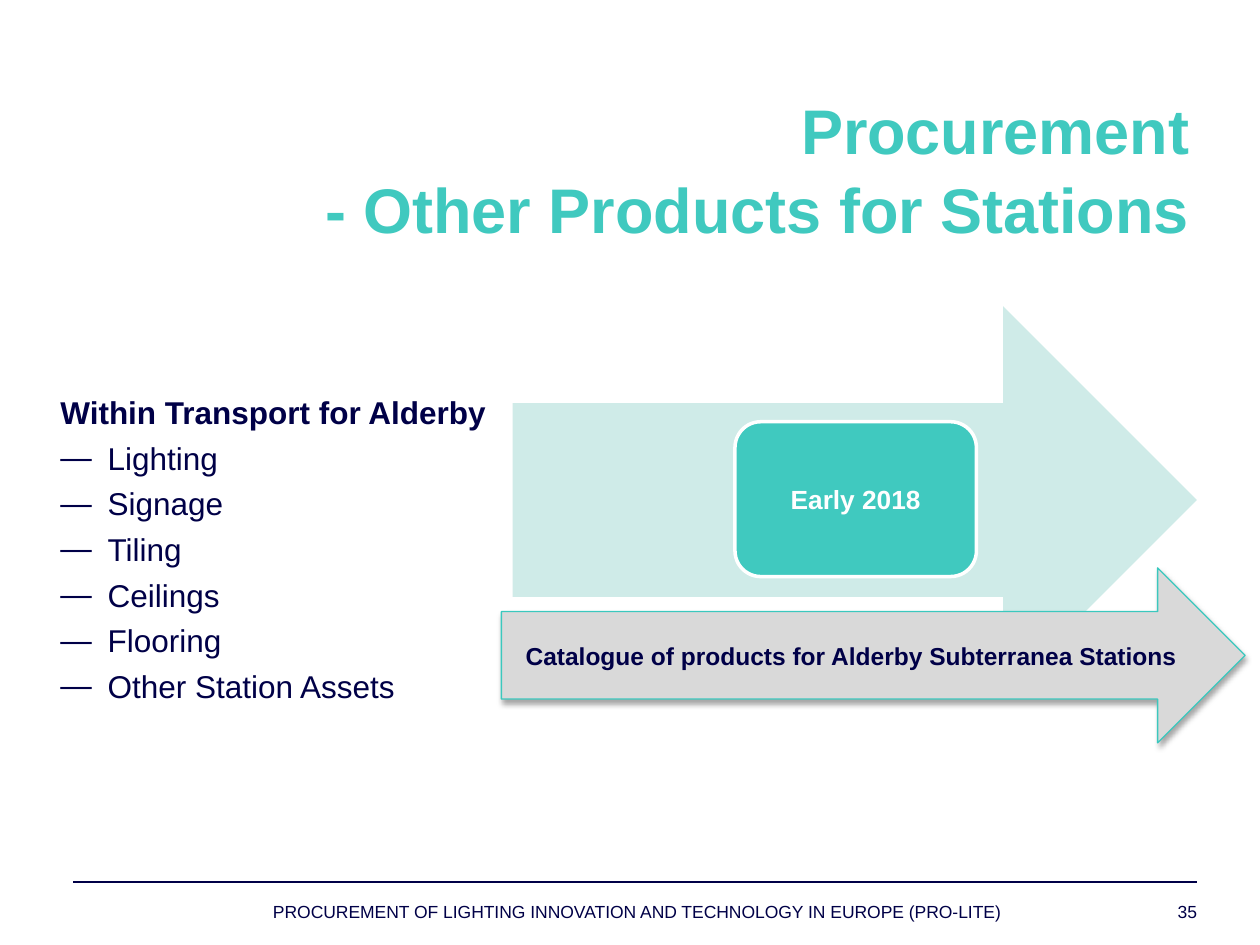
from dataclasses import dataclass

from lxml.etree import SubElement
from pptx import Presentation
from pptx.dml.color import RGBColor
from pptx.enum.shapes import MSO_CONNECTOR, MSO_SHAPE
from pptx.enum.text import MSO_ANCHOR, MSO_AUTO_SIZE, PP_ALIGN
from pptx.oxml.ns import qn
from pptx.util import Pt

TITLE = ["Procurement", "- Other Products for Stations"]
HEADING = "Within Transport for Alderby"
PRODUCTS = ["Lighting", "Signage", "Tiling", "Ceilings", "Flooring", "Other Station Assets"]
MILESTONE = "Early 2018"
CATALOGUE = "Catalogue of products for Alderby Subterranea Stations"
FOOTER = "PROCUREMENT OF LIGHTING INNOVATION AND TECHNOLOGY IN EUROPE (PRO-LITE)"
PAGE_NUMBER = "35"


@dataclass(frozen=True)
class Theme:
    font: str = "Arial"
    navy: str = "000047"
    teal: str = "40C9BF"
    outline: str = "3BC8BE"
    pale: str = "CFEBE8"
    grey: str = "D9D9D9"
    white: str = "FFFFFF"
    title: int = 36
    body: int = 18
    milestone: int = 15
    catalogue: int = 14
    footer: int = 10


THEME = Theme()
MARGIN_RIGHT = 684
BULLET_INDENT = 27


def write(paragraph, text, size, color=THEME.navy, bold=False, align=PP_ALIGN.LEFT, before=0):
    paragraph.alignment = align
    paragraph.space_before = Pt(before)
    run = paragraph.add_run()
    run.text = text
    run.font.name = THEME.font
    run.font.size = Pt(size)
    run.font.bold = bold
    run.font.color.rgb = RGBColor.from_string(color)


def next_paragraph(frame, index):
    return frame.add_paragraph() if index else frame.paragraphs[0]


def add_dash(paragraph):
    properties = paragraph._p.get_or_add_pPr()
    properties.set("marL", str(Pt(BULLET_INDENT)))
    properties.set("indent", str(-Pt(BULLET_INDENT)))
    SubElement(properties, qn("a:buFont"), typeface=THEME.font)
    SubElement(properties, qn("a:buChar"), char="—")


def add_text_box(slide, box, inset=None):
    frame = slide.shapes.add_textbox(*map(Pt, box)).text_frame
    frame.word_wrap = True
    if inset is not None:
        frame.margin_left = frame.margin_top = frame.margin_right = frame.margin_bottom = Pt(inset)
    return frame


def add_block(slide, kind, box, fill, line=None, width=0):
    shape = slide.shapes.add_shape(kind, *map(Pt, box))
    shape.shadow.inherit = False
    shape.fill.solid()
    shape.fill.fore_color.rgb = RGBColor.from_string(fill)
    if line:
        shape.line.color.rgb = RGBColor.from_string(line)
        shape.line.width = Pt(width)
    else:
        shape.line.fill.background()
    shape.text_frame.word_wrap = True
    shape.text_frame.vertical_anchor = MSO_ANCHOR.MIDDLE
    return shape


def add_shadow(shape):
    effects = shape._element.spPr.find(qn("a:effectLst"))
    shadow = SubElement(effects, qn("a:outerShdw"), blurRad=str(Pt(3.1)), dist=str(Pt(1.8)),
                        dir="5400000", rotWithShape="0")
    color = SubElement(shadow, qn("a:srgbClr"), val="000000")
    SubElement(color, qn("a:alpha"), val="35000")


def add_title(slide):
    title = slide.shapes.title
    title.left, title.top, title.width, title.height = map(Pt, (38, 48.5, 649, 94))
    frame = title.text_frame
    frame.word_wrap = True
    frame.auto_size = MSO_AUTO_SIZE.NONE
    frame.vertical_anchor = MSO_ANCHOR.TOP
    for index, text in enumerate(TITLE):
        write(next_paragraph(frame, index), text, THEME.title, THEME.teal, True,
              PP_ALIGN.RIGHT, 2 if index else 0)


def add_products(slide):
    frame = add_text_box(slide, (27.4, 221, 262, 192))
    for index, text in enumerate([HEADING, *PRODUCTS]):
        paragraph = next_paragraph(frame, index)
        if index:
            add_dash(paragraph)
        write(paragraph, text, THEME.body, bold=index == 0, before=4.5 if index else 0)


def add_timeline(slide):
    add_block(slide, MSO_SHAPE.RIGHT_ARROW, (293, 175, 391, 221.5), THEME.pale)
    milestone = add_block(slide, MSO_SHAPE.ROUNDED_RECTANGLE, (420, 241, 138, 88.5),
                          THEME.teal, THEME.white, 2)
    write(milestone.text_frame.paragraphs[0], MILESTONE, THEME.milestone, THEME.white,
          True, PP_ALIGN.CENTER)
    catalogue = add_block(slide, MSO_SHAPE.RIGHT_ARROW, (286.5, 324.5, 425, 100),
                          THEME.grey, THEME.outline, 0.75)
    add_shadow(catalogue)
    write(catalogue.text_frame.paragraphs[0], CATALOGUE, THEME.catalogue, bold=True,
          align=PP_ALIGN.CENTER)


def add_footer(slide):
    rule = slide.shapes.add_connector(MSO_CONNECTOR.STRAIGHT, Pt(42), Pt(504),
                                      Pt(MARGIN_RIGHT), Pt(504))
    rule.line.color.rgb = RGBColor.from_string(THEME.navy)
    rule.line.width = Pt(1)
    SubElement(rule._element.spPr, qn("a:effectLst"))
    for text, left, width, align in [
        (FOOTER, 156, 444, PP_ALIGN.LEFT),
        (PAGE_NUMBER, MARGIN_RIGHT - 72, 72, PP_ALIGN.RIGHT),
    ]:
        frame = add_text_box(slide, (left, 515, width, 25), 0)
        write(frame.paragraphs[0], text, THEME.footer, align=align)


def main():
    presentation = Presentation()
    presentation.slide_width, presentation.slide_height = Pt(720), Pt(540)
    slide = presentation.slides.add_slide(presentation.slide_layouts[5])
    add_title(slide)
    add_products(slide)
    add_timeline(slide)
    add_footer(slide)
    presentation.save("out.pptx")


if __name__ == "__main__":
    main()
